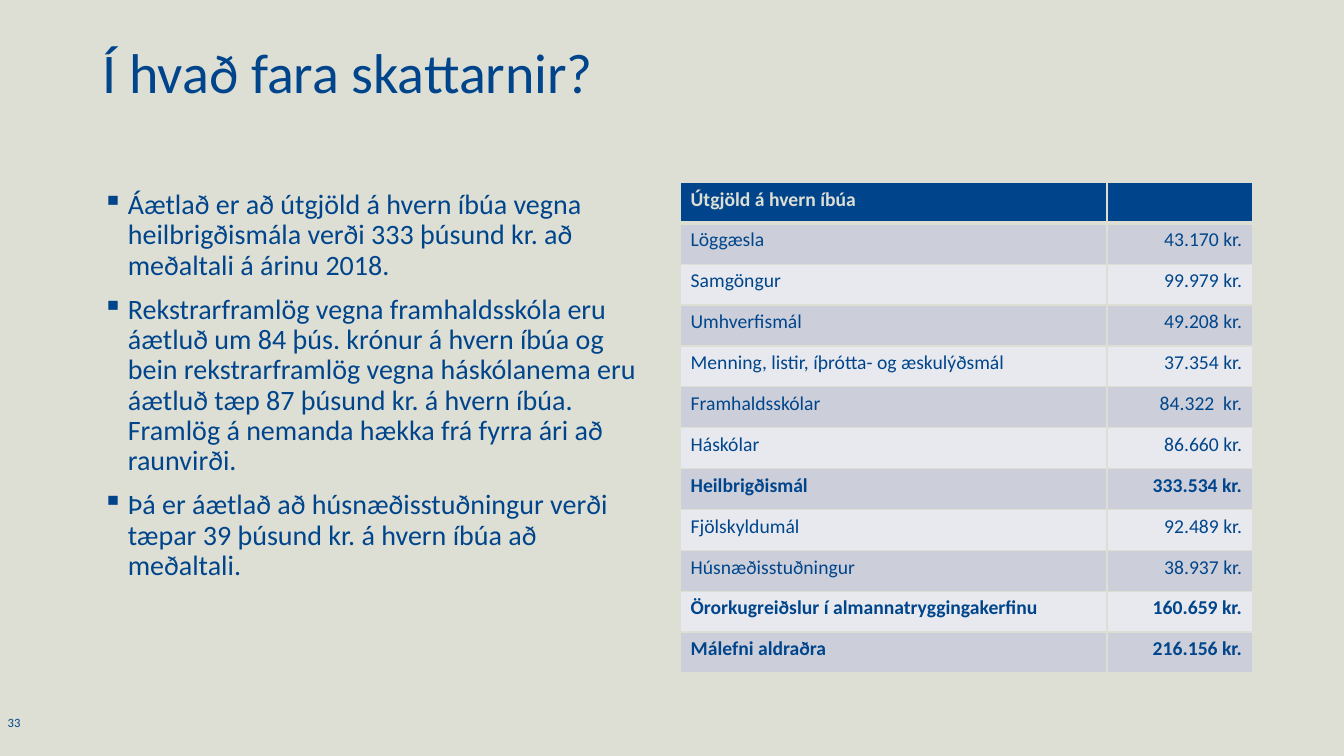
from lxml.etree import SubElement
from pptx import Presentation
from pptx.dml.color import RGBColor
from pptx.enum.text import PP_ALIGN
from pptx.oxml import parse_xml
from pptx.oxml.ns import nsdecls, qn
from pptx.util import Inches, Pt

NAVY = RGBColor(0x00, 0x45, 0x8B)
SAND = RGBColor(0xDD, 0xDE, 0xD4)
BAND_DARK = RGBColor(0xCC, 0xCF, 0xDA)
BAND_LIGHT = RGBColor(0xE7, 0xE9, 0xEE)

POINTS = [
    "Áætlað er að útgjöld á hvern íbúa vegna heilbrigðismála verði 333 þúsund kr. "
    "að meðaltali á árinu 2018.",
    "Rekstrarframlög vegna framhaldsskóla eru áætluð um 84 þús. krónur á hvern íbúa "
    "og bein rekstrarframlög vegna háskólanema eru áætluð tæp 87 þúsund kr. á hvern "
    "íbúa. Framlög á nemanda hækka frá fyrra ári að raunvirði.",
    "Þá er áætlað að húsnæðisstuðningur verði tæpar 39 þúsund kr. á hvern íbúa "
    "að meðaltali.",
]
EXPENSES = [
    ("Útgjöld á hvern íbúa", ""),
    ("Löggæsla", "43.170 kr."),
    ("Samgöngur", "99.979 kr."),
    ("Umhverfismál", "49.208 kr."),
    ("Menning, listir, íþrótta- og æskulýðsmál", "37.354 kr."),
    ("Framhaldsskólar", "84.322  kr."),
    ("Háskólar", "86.660 kr."),
    ("Heilbrigðismál", "333.534 kr."),
    ("Fjölskyldumál", "92.489 kr."),
    ("Húsnæðisstuðningur", "38.937 kr."),
    ("Örorkugreiðslur í almannatryggingakerfinu", "160.659 kr."),
    ("Málefni aldraðra", "216.156 kr."),
]
BOLD_ROWS = {0, 7, 10, 11}


class TaxSlide:
    font_name = "Calibri"

    def __init__(self, presentation):
        self.slide = presentation.slides.add_slide(presentation.slide_layouts[6])
        fill = self.slide.background.fill
        fill.solid()
        fill.fore_color.rgb = SAND

    def style(self, paragraph, size, color=NAVY, bold=False):
        font = paragraph.font
        font.name = self.font_name
        font.size = Pt(size)
        font.color.rgb = color
        font.bold = bold

    def text(self, box, content, size, align=PP_ALIGN.LEFT, spacing=0.9, inset=True):
        frame = self.slide.shapes.add_textbox(*map(Inches, box)).text_frame
        frame.word_wrap = True
        if not inset:
            frame.margin_left = frame.margin_right = 0
            frame.margin_top = frame.margin_bottom = 0
        frame.text = content
        for paragraph in frame.paragraphs:
            paragraph.alignment = align
            paragraph.line_spacing = spacing
            self.style(paragraph, size)
        return frame

    def bullets(self, box, points, size):
        frame = self.text(box, "\n".join(points), size)
        for index, paragraph in enumerate(frame.paragraphs):
            if index:
                paragraph.space_before = Pt(10)
            properties = paragraph._p.get_or_add_pPr()
            properties.set("marL", str(Inches(0.25)))
            properties.set("indent", str(-Inches(0.25)))
            bullet = parse_xml(f'<a:buChar {nsdecls("a")} char="▪"/>')
            properties.find(qn("a:defRPr")).addprevious(bullet)

    def borders(self, cell, **widths):
        """Draw sand-coloured cell edges; widths are points by edge L, R, T, B."""
        properties = cell._tc.get_or_add_tcPr()
        for index, edge in enumerate("LRTB"):
            line = parse_xml(f'<a:ln{edge} {nsdecls("a")} w="{Pt(widths.get(edge, 1))}"/>')
            solid = SubElement(line, qn("a:solidFill"))
            SubElement(solid, qn("a:srgbClr"), val=str(SAND))
            properties.insert(index, line)

    def table(self, box, rows, column_widths, size):
        table = self.slide.shapes.add_table(
            len(rows), len(column_widths), *map(Inches, box)).table
        for column, width in zip(table.columns, column_widths):
            column.width = Inches(width)
        for r, row in enumerate(rows):
            for c, content in enumerate(row):
                cell = table.cell(r, c)
                cell.text = content
                cell.fill.solid()
                band = BAND_DARK if r % 2 else BAND_LIGHT
                cell.fill.fore_color.rgb = band if r else NAVY
                self.borders(cell, B=1 if r else 3, T=3 if r == 1 else 1)
                paragraph = cell.text_frame.paragraphs[0]
                paragraph.alignment = PP_ALIGN.RIGHT if c else PP_ALIGN.LEFT
                self.style(paragraph, size, NAVY if r else SAND, r in BOLD_ROWS)
                for run in paragraph.runs:
                    self.style(run, size, NAVY if r else SAND, r in BOLD_ROWS)


def main():
    presentation = Presentation()
    presentation.slide_width = Inches(13.33)
    presentation.slide_height = Inches(7.5)
    slide = TaxSlide(presentation)
    slide.text((0, 7.09, 0.28, 0.26), "33", 9, PP_ALIGN.CENTER, 1, inset=False)
    slide.text((0.92, 0.4, 11.5, 1.45), "Í hvað fara skattarnir?", 40)
    slide.bullets((0.92, 1.84, 5.64, 4.93), POINTS, 20)
    slide.table((6.75, 1.81, 5.67, 4.87), EXPENSES, (4.23, 1.44), 14)
    presentation.save("out.pptx")


if __name__ == "__main__":
    main()
